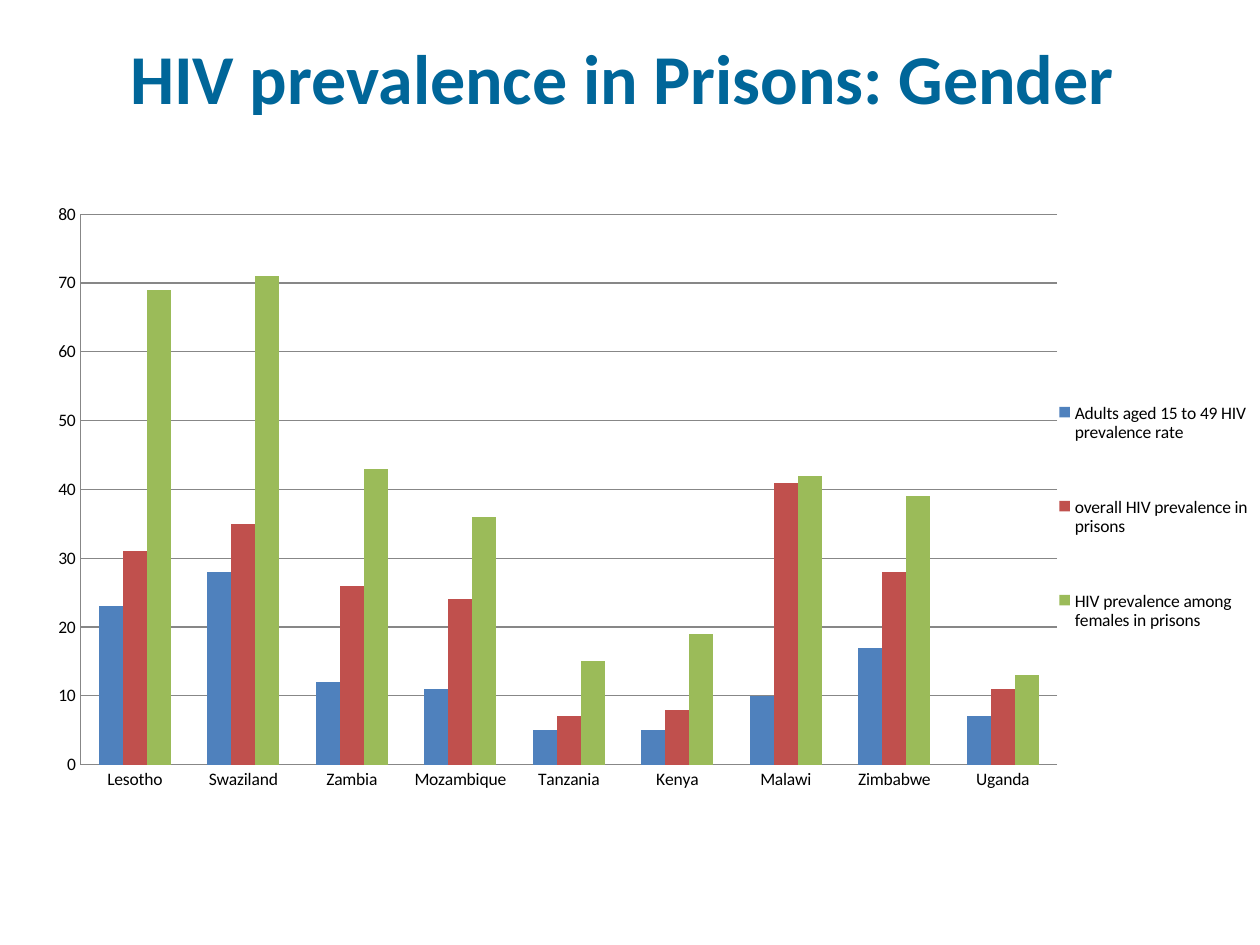
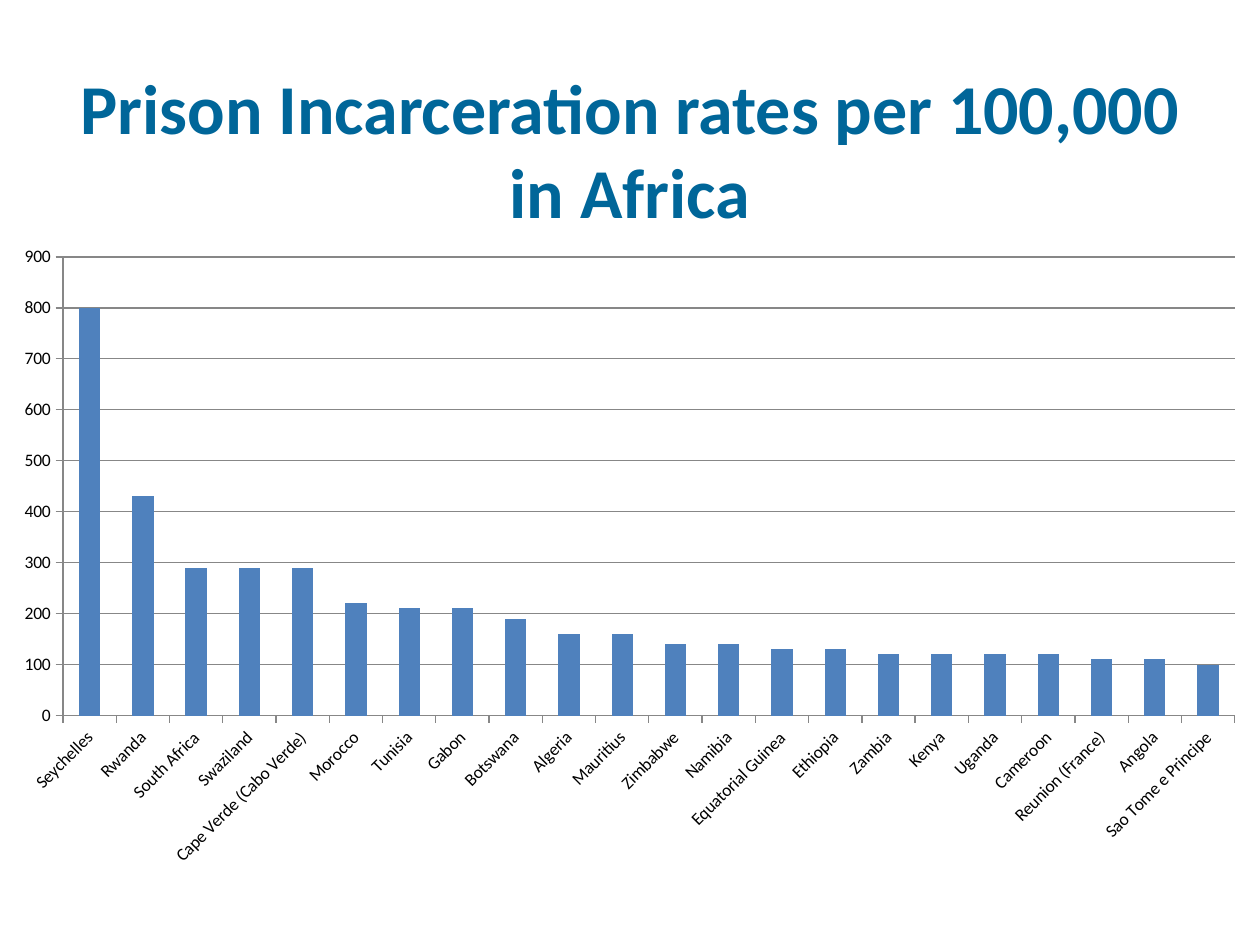
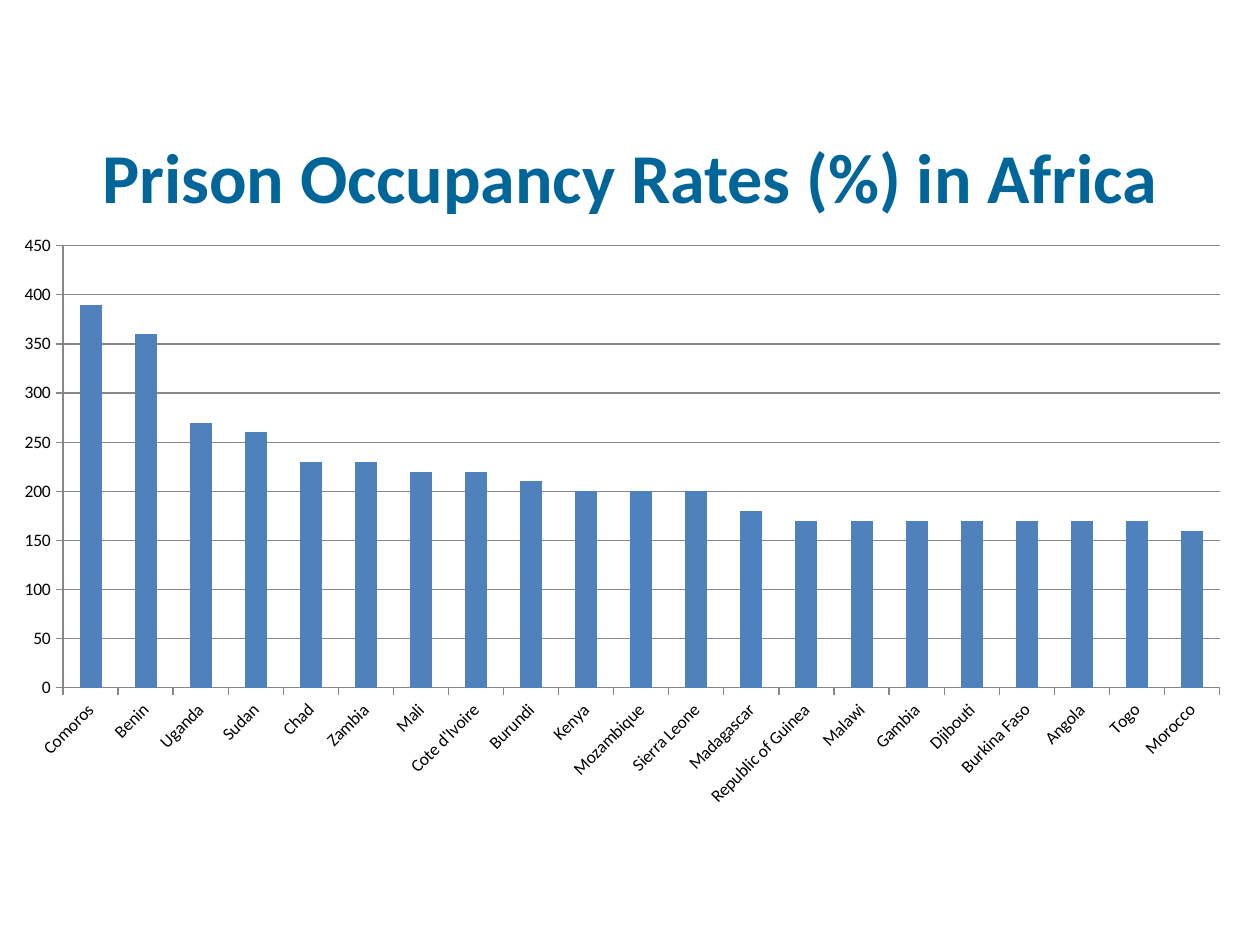
"""Build three chart slides on HIV prevalence, incarceration and occupancy in African prisons."""
from dataclasses import dataclass
from typing import Optional

from lxml.etree import SubElement
from pptx import Presentation
from pptx.chart.chart import Chart
from pptx.chart.data import CategoryChartData
from pptx.dml.color import RGBColor
from pptx.enum.chart import XL_CHART_TYPE as ChartType
from pptx.enum.chart import XL_LEGEND_POSITION as LegendPosition
from pptx.enum.chart import XL_TICK_MARK as TickMark
from pptx.enum.text import MSO_ANCHOR as Anchor
from pptx.enum.text import PP_ALIGN as Align
from pptx.oxml.ns import qn
from pptx.slide import Slide
from pptx.util import Inches, Pt

FONT = "Calibri"
COLORS = {
    "title": "006699",
    "text": "000000",
    "grid": "878787",
    "blue": "4F81BD",
    "red": "C0504D",
    "green": "9BBB59",
}


@dataclass(frozen=True)
class Area:
    left: float
    top: float
    width: float
    height: float


@dataclass(frozen=True)
class Title:
    lines: tuple[str, ...]
    area: Area
    top_inset: float = 0.73


@dataclass(frozen=True)
class Series:
    name: str
    color: str
    values: tuple[int, ...]


@dataclass(frozen=True)
class ColumnChart:
    area: Area
    plot: Area
    categories: tuple[str, ...]
    series: tuple[Series, ...]
    maximum: int
    step: int
    tick: TickMark = TickMark.OUTSIDE
    label_angle: int = -45
    legend: Optional[Area] = None


@dataclass(frozen=True)
class Page:
    title: Title
    chart: ColumnChart


PAGES = (
    Page(
        Title(("HIV prevalence in Prisons: Gender ",), Area(0, -0.03, 10, 1.23), 0.1),
        ColumnChart(
            area=Area(0.28, 1.55, 9.73, 5.35),
            plot=Area(0.64, 1.7, 7.75, 4.37),
            categories=(
                "Lesotho", "Swaziland", "Zambia", "Mozambique", "Tanzania",
                "Kenya", "Malawi", "Zimbabwe", "Uganda",
            ),
            series=(
                Series("Adults aged 15 to 49 HIV prevalence rate", "blue",
                       (23, 28, 12, 11, 5, 5, 10, 17, 7)),
                Series("overall HIV prevalence in prisons", "red",
                       (31, 35, 26, 24, 7, 8, 41, 28, 11)),
                Series("HIV prevalence among females in prisons", "green",
                       (69, 71, 43, 36, 15, 19, 42, 39, 13)),
            ),
            maximum=80,
            step=10,
            tick=TickMark.NONE,
            label_angle=0,
            legend=Area(8.33, 2.77, 1.65, 2.67),
        ),
    ),
    Page(
        Title(("Prison Incarceration rates per 100,000", "in Africa"), Area(0, 0, 10, 1.67)),
        ColumnChart(
            area=Area(0, 1.86, 10, 5.12),
            plot=Area(0.5, 2.04, 9.3, 3.64),
            categories=(
                "Seychelles", "Rwanda", "South Africa", "Swaziland",
                "Cape Verde (Cabo Verde)", "Morocco", "Tunisia", "Gabon",
                "Botswana", "Algeria", "Mauritius", "Zimbabwe", "Namibia",
                "Equatorial Guinea", "Ethiopia", "Zambia", "Kenya", "Uganda",
                "Cameroon", "Reunion (France)", "Angola", "Sao Tome e Principe",
            ),
            series=(
                Series("Series 1", "blue",
                       (800, 430, 290, 290, 290, 220, 210, 210, 190, 160, 160,
                        140, 140, 130, 130, 120, 120, 120, 120, 110, 110, 100)),
            ),
            maximum=900,
            step=100,
        ),
    ),
    Page(
        Title(("Prison Occupancy Rates (%) in Africa",), Area(0, 0.44, 10, 1.23)),
        ColumnChart(
            area=Area(0, 1.78, 9.88, 4.72),
            plot=Area(0.5, 1.95, 9.18, 3.51),
            categories=(
                "Comoros", "Benin", "Uganda", "Sudan", "Chad", "Zambia", "Mali",
                "Cote d'Ivoire", "Burundi", "Kenya", "Mozambique", "Sierra Leone",
                "Madagascar", "Republic of Guinea", "Malawi", "Gambia", "Djibouti",
                "Burkina Faso", "Angola", "Togo", "Morocco",
            ),
            series=(
                Series("Series 1", "blue",
                       (390, 360, 270, 260, 230, 230, 220, 220, 210, 200, 200,
                        200, 180, 170, 170, 170, 170, 170, 170, 170, 160)),
            ),
            maximum=450,
            step=50,
        ),
    ),
)


def color(name: str) -> RGBColor:
    return RGBColor.from_string(COLORS[name])


def frame(area: Area) -> tuple[int, ...]:
    return tuple(Inches(n) for n in (area.left, area.top, area.width, area.height))


def add_title(slide: Slide, title: Title) -> None:
    box = slide.shapes.add_textbox(*frame(title.area)).text_frame
    box.word_wrap = True
    box.vertical_anchor = Anchor.MIDDLE
    box.margin_top = Inches(title.top_inset)
    para = box.paragraphs[0]
    para.alignment = Align.CENTER
    for index, line in enumerate(title.lines):
        if index:
            para.add_line_break()
        span = para.add_run()
        span.text = line
        span.font.name = FONT
        span.font.size = Pt(40)
        span.font.bold = True
        span.font.color.rgb = color("title")


def place(parent, index: int, inner: Area, outer: Area, target: str = "") -> None:
    for old in parent.findall(qn("c:layout")):
        parent.remove(old)
    layout = SubElement(parent, qn("c:layout"))
    parent.insert(index, layout)
    manual = SubElement(layout, qn("c:manualLayout"))
    settings = {"layoutTarget": target} if target else {}
    settings |= {
        "xMode": "edge",
        "yMode": "edge",
        "x": (inner.left - outer.left) / outer.width,
        "y": (inner.top - outer.top) / outer.height,
        "w": inner.width / outer.width,
        "h": inner.height / outer.height,
    }
    for tag, value in settings.items():
        SubElement(manual, qn(f"c:{tag}")).set("val", str(value))


def style_axes(chart: Chart, column: ColumnChart) -> None:
    values = chart.value_axis
    values.minimum_scale = 0
    values.maximum_scale = column.maximum
    values.major_unit = column.step
    values.has_major_gridlines = True
    for axis in (chart.category_axis, values):
        axis.major_tick_mark = column.tick
        axis.minor_tick_mark = TickMark.NONE
        axis.tick_labels.font.size = Pt(10)
    for item in (chart.category_axis, values, values.major_gridlines):
        item.format.line.color.rgb = color("grid")
        item.format.line.width = Pt(0.75)
    for body in chart.element.xpath(".//c:catAx/c:txPr/a:bodyPr"):
        body.set("rot", str(column.label_angle * 60000))


def add_column_chart(slide: Slide, column: ColumnChart) -> None:
    data = CategoryChartData()
    data.categories = column.categories
    for series in column.series:
        data.add_series(series.name, series.values)
    chart = slide.shapes.add_chart(
        ChartType.COLUMN_CLUSTERED, *frame(column.area), data
    ).chart
    chart.has_title = False
    chart.font.name = FONT
    chart.font.size = Pt(10)
    chart.font.color.rgb = color("text")
    plot = chart.plots[0]
    plot.gap_width = 150
    plot.overlap = 0
    plot.vary_by_categories = False
    for drawn, series in zip(plot.series, column.series):
        drawn.format.fill.solid()
        drawn.format.fill.fore_color.rgb = color(series.color)
    style_axes(chart, column)
    place(chart.element.xpath(".//c:plotArea")[0], 0, column.plot, column.area, "inner")
    chart.has_legend = column.legend is not None
    if column.legend:
        chart.legend.position = LegendPosition.RIGHT
        chart.legend.include_in_layout = False
        place(chart.element.xpath(".//c:legend")[0], 1, column.legend, column.area)


def main() -> None:
    deck = Presentation()
    deck.slide_width, deck.slide_height = Inches(10), Inches(7.5)
    for page in PAGES:
        slide = deck.slides.add_slide(deck.slide_layouts[6])
        add_title(slide, page.title)
        add_column_chart(slide, page.chart)
    deck.save("out.pptx")


if __name__ == "__main__":
    main()
